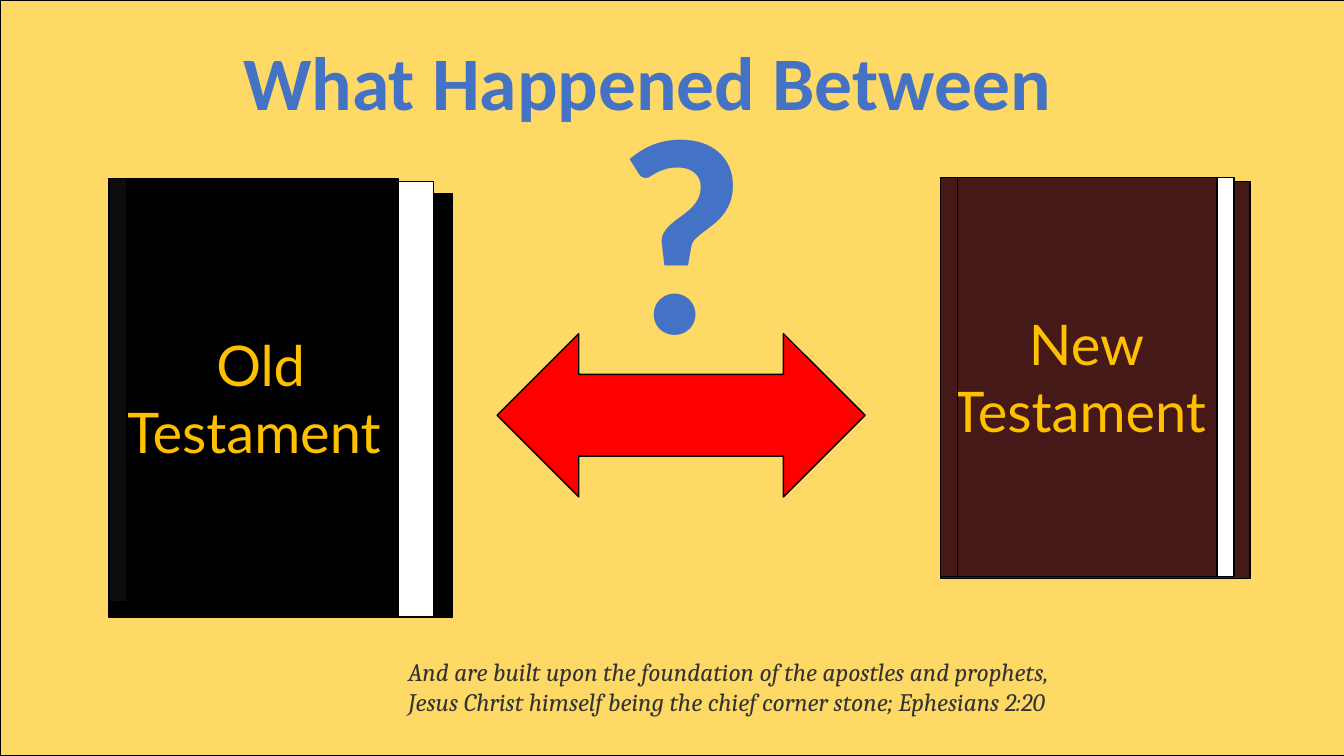
from dataclasses import dataclass

from pptx import Presentation
from pptx.dml.color import RGBColor
from pptx.enum.shapes import MSO_SHAPE
from pptx.enum.text import MSO_ANCHOR, MSO_AUTO_SIZE, PP_ALIGN
from pptx.util import Emu, Pt

RECTANGLE = MSO_SHAPE.RECTANGLE
DOUBLE_ARROW = MSO_SHAPE.LEFT_RIGHT_ARROW
TOP, MIDDLE = MSO_ANCHOR.TOP, MSO_ANCHOR.MIDDLE
LEFT, CENTER = PP_ALIGN.LEFT, PP_ALIGN.CENTER
GROW = MSO_AUTO_SIZE.SHAPE_TO_FIT_TEXT


@dataclass(frozen=True)
class TextStyle:
    font: str
    size: int
    color: str
    bold: bool = False
    italic: bool = False
    align: PP_ALIGN = CENTER


@dataclass(frozen=True)
class Theme:
    backdrop: str = "FFD966"
    outline: str = "000000"
    pages: str = "FFFFFF"
    arrow: str = "FF0000"
    title: TextStyle = TextStyle("Calibri", 54, "4472C4", bold=True)
    question: TextStyle = TextStyle("Calibri", 200, "4472C4", bold=True)
    cover: TextStyle = TextStyle("Lato", 40, "FFC000")
    verse: TextStyle = TextStyle("Cambria", 18, "333333", italic=True, align=LEFT)


THEME = Theme()
EMU_PER_PX = 9144
SLIDE_SIZE = (1333, 750)

TITLE = ("What Happened Between ", (214, 30, 873, 101))
QUESTION = ("?", (601, 48, 150, 347))
VERSE = (
    "And are built upon the foundation of the apostles and prophets, "
    "Jesus Christ himself being the chief corner stone; Ephesians 2:20",
    (395, 646, 667, 101),
)
BACKDROP_BOX = (0, 0, 1348, 750)
ARROW_BOX = (493, 331, 365, 162)
BOOKS = [
    {
        "title": " Old Testament", "cover_color": "000000", "spine_color": "0D0D0D",
        "back": (108, 192, 341, 420), "pages": (143, 180, 287, 432),
        "cover": (108, 177, 287, 435), "spine": (108, 177, 18, 420),
    },
    {
        "title": " New Testament", "cover_color": "441918", "spine_color": "441918",
        "back": (933, 180, 307, 394), "pages": (967, 176, 257, 396),
        "cover": (933, 176, 274, 396), "spine": (933, 176, 17, 396),
    },
]


def scale(box):
    return [Emu(length * EMU_PER_PX) for length in box]


def add_block(shapes, box, color, preset=RECTANGLE):
    shape = shapes.add_shape(preset, *scale(box))
    shape.shadow.inherit = False
    shape.fill.solid()
    shape.fill.fore_color.rgb = RGBColor.from_string(color)
    shape.line.color.rgb = RGBColor.from_string(THEME.outline)
    shape.line.width = Pt(1)
    return shape


def write(shape, text, style, anchor=TOP, wrap=True):
    frame = shape.text_frame
    frame.text = text
    frame.word_wrap = wrap
    frame.vertical_anchor = anchor
    paragraph = frame.paragraphs[0]
    paragraph.alignment = style.align
    paragraph.line_spacing = 1.0
    paragraph.space_before = Pt(0)
    font = paragraph.runs[0].font
    font.name = style.font
    font.size = Pt(style.size)
    font.bold = style.bold
    font.italic = style.italic
    font.color.rgb = RGBColor.from_string(style.color)


def add_book(slide, book):
    shapes = slide.shapes.add_group_shape().shapes
    add_block(shapes, book["back"], book["cover_color"])
    add_block(shapes, book["pages"], THEME.pages)
    cover = add_block(shapes, book["cover"], book["cover_color"])
    write(cover, book["title"], THEME.cover, MIDDLE)
    add_block(shapes, book["spine"], book["spine_color"])


def place_title(slide):
    text, box = TITLE
    title = slide.shapes.title
    title.left, title.top, title.width, title.height = scale(box)
    write(title, text, THEME.title, wrap=False)
    title.text_frame.auto_size = GROW
    slide.shapes.element.append(title.element)


def add_text(slide, content, style, wrap):
    text, box = content
    shape = slide.shapes.add_textbox(*scale(box))
    write(shape, text, style, wrap=wrap)
    shape.text_frame.auto_size = GROW


def main():
    presentation = Presentation()
    presentation.slide_width, presentation.slide_height = scale(SLIDE_SIZE)
    slide = presentation.slides.add_slide(presentation.slide_layouts[5])
    add_block(slide.shapes, BACKDROP_BOX, THEME.backdrop)
    for book in BOOKS:
        add_book(slide, book)
    place_title(slide)
    add_block(slide.shapes, ARROW_BOX, THEME.arrow, DOUBLE_ARROW)
    add_text(slide, QUESTION, THEME.question, wrap=False)
    add_text(slide, VERSE, THEME.verse, wrap=True)
    presentation.save("out.pptx")


if __name__ == "__main__":
    main()
